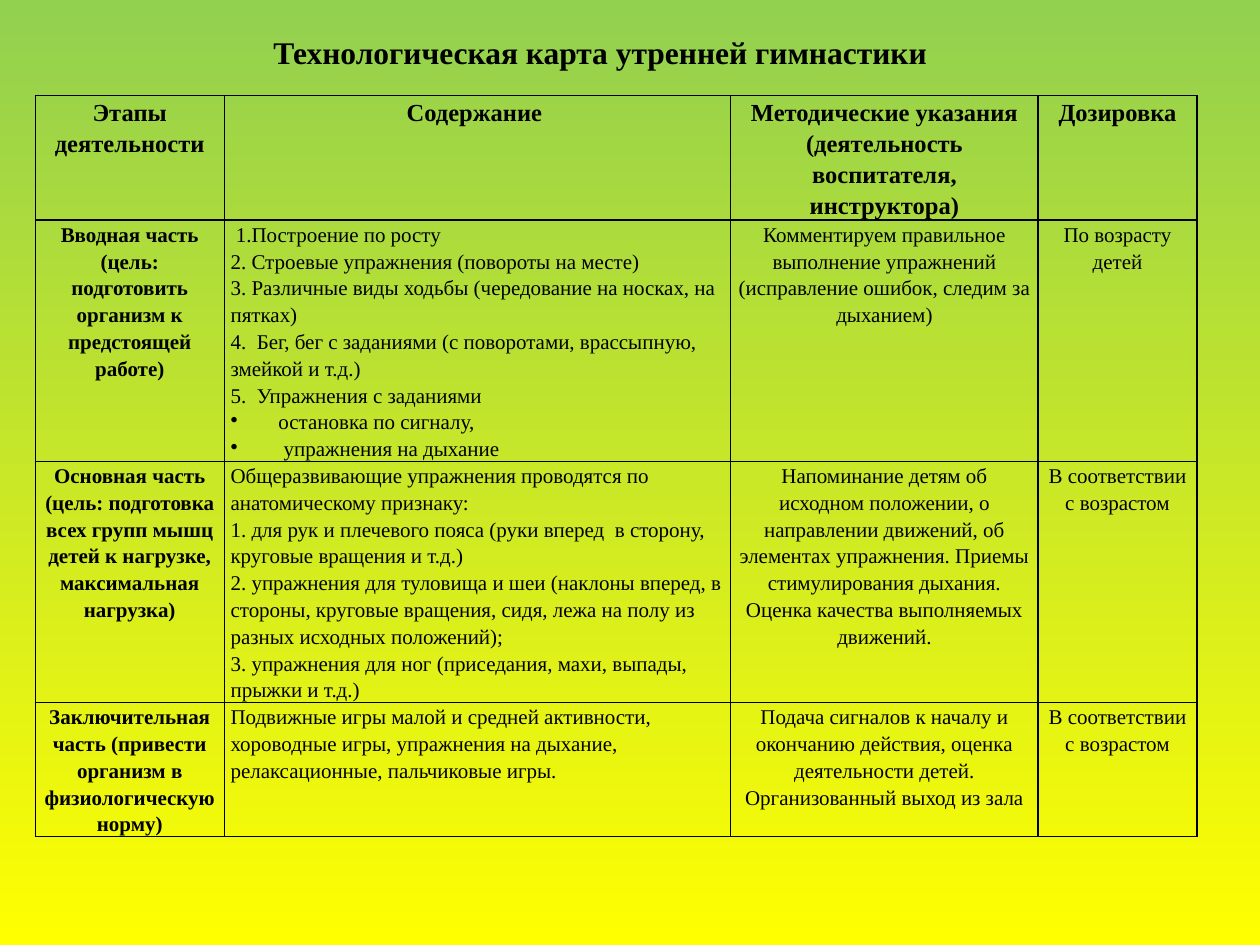
import pptx
import pptx.util
import pptx.oxml
import pptx.oxml.ns
from pptx.dml.color import RGBColor
from pptx.enum.text import MSO_AUTO_SIZE, PP_ALIGN
from pptx.util import Inches
from lxml import etree

BLACK = RGBColor(0x00, 0x00, 0x00)
GREEN = RGBColor(0x92, 0xD0, 0x50)
YELLOW = RGBColor(0xFF, 0xFF, 0x00)
BULLET = "•"

COLUMN_WIDTHS = [1.5, 4.02, 2.44, 1.26]
ROW_HEIGHTS = [0.85, 1.55, 1.7, 0.93]

# Each cell is a list of paragraphs; a leading bullet marks a list item
ROWS = [
    [
        ["Этапы деятельности"],
        ["Содержание "],
        ["Методические указания (деятельность воспитателя, инструктора)"],
        ["Дозировка"],
    ],
    [
        ["Вводная часть (цель: подготовить организм к предстоящей работе)"],
        [
            " 1.Построение по росту",
            "2. Строевые упражнения (повороты на месте)",
            "3. Различные виды ходьбы (чередование на носках, на пятках)",
            "4.  Бег, бег с заданиями (с поворотами, врассыпную, змейкой и т.д.)",
            "5.  Упражнения с заданиями",
            "•остановка по сигналу,",
            "• упражнения на дыхание",
        ],
        ["Комментируем правильное выполнение упражнений "
         "(исправление ошибок, следим за дыханием)"],
        ["По возрасту детей"],
    ],
    [
        [
            " Основная часть ",
            "(цель: подготовка всех групп мышц детей к нагрузке, "
            "максимальная нагрузка)",
        ],
        [
            "Общеразвивающие упражнения проводятся по анатомическому признаку:",
            "1. для рук и плечевого пояса (руки вперед  в сторону, "
            "круговые вращения и т.д.)",
            "2. упражнения для туловища и шеи (наклоны вперед, в стороны, "
            "круговые вращения, сидя, лежа на полу из разных исходных положений);",
            "3. упражнения для ног (приседания, махи, выпады, прыжки и т.д.)",
        ],
        ["Напоминание детям об исходном положении, о направлении движений, "
         "об элементах упражнения. Приемы стимулирования дыхания. "
         "Оценка качества выполняемых движений."],
        ["В соответствии с возрастом"],
    ],
    [
        ["Заключительная часть (привести организм в физиологическую норму)"],
        ["Подвижные игры малой и средней активности, хороводные игры, "
         "упражнения на дыхание, релаксационные, пальчиковые игры."],
        [
            "Подача сигналов к началу и окончанию действия, "
            "оценка деятельности детей.",
            "Организованный выход из зала",
        ],
        ["В соответствии с возрастом"],
    ],
]


class SlideBuilder:
    font_name = "Times New Roman"
    line_spacing = 1.15
    indent = Inches(0.38)

    def __init__(self, page):
        self.page = page

    def background(self, top, bottom):
        fill = self.page.background.fill
        fill.gradient()
        fill.gradient_angle = 270
        for stop, color in zip(fill.gradient_stops, (top, bottom)):
            stop.color.rgb = color

    def style(self, paragraph, size, bold, align):
        paragraph.alignment = align
        font = paragraph.font
        font.name = self.font_name
        font.size = pptx.util.Pt(size)
        font.bold = bold
        font.color.rgb = BLACK

    def title(self, text, left, top, width, height):
        box = self.page.shapes.add_textbox(
            Inches(left), Inches(top), Inches(width), Inches(height))
        frame = box.text_frame
        frame.word_wrap = True
        frame.auto_size = MSO_AUTO_SIZE.SHAPE_TO_FIT_TEXT
        frame.text = text
        self.style(frame.paragraphs[0], 18, True, PP_ALIGN.CENTER)

    def bullet(self, paragraph):
        properties = paragraph._p.get_or_add_pPr()
        properties.set("marL", str(self.indent))
        properties.set("indent", str(-self.indent))
        mark = etree.SubElement(properties, pptx.oxml.ns.qn("a:buChar"))
        mark.set("char", BULLET)

    def borders(self, cell):
        properties = cell._tc.get_or_add_tcPr()
        for position, side in enumerate(("lnL", "lnR", "lnT", "lnB")):
            properties.insert(position, pptx.oxml.parse_xml(
                f'<a:{side} {pptx.oxml.ns.nsdecls("a")} w="12700"><a:solidFill>'
                f'<a:srgbClr val="{BLACK}"/></a:solidFill></a:{side}>'))

    def cell(self, cell, lines, size, bold, align):
        cell.margin_left = cell.margin_right = Inches(0.05)
        cell.margin_top = cell.margin_bottom = 0
        cell.fill.background()
        self.borders(cell)
        frame = cell.text_frame
        for number, line in enumerate(lines):
            paragraph = frame.add_paragraph() if number else frame.paragraphs[0]
            paragraph.text = line.removeprefix(BULLET)
            paragraph.line_spacing = self.line_spacing
            if line.startswith(BULLET):
                self.bullet(paragraph)
            self.style(paragraph, size, bold, align)

    def table(self, rows, left, top, widths, heights):
        table = self.page.shapes.add_table(
            len(rows), len(widths), Inches(left), Inches(top),
            Inches(sum(widths)), Inches(sum(heights))).table
        table.first_row = table.horz_banding = False
        for column, width in zip(table.columns, widths):
            column.width = Inches(width)
        for row, height in zip(table.rows, heights):
            row.height = Inches(height)
        for r, row in enumerate(rows):
            for c, lines in enumerate(row):
                header = r == 0
                content = c == 1 and not header
                self.cell(table.cell(r, c), lines,
                          size=14 if header else 12,
                          bold=header or c == 0,
                          align=PP_ALIGN.LEFT if content else PP_ALIGN.CENTER)


def main():
    deck = pptx.Presentation()
    deck.slide_width, deck.slide_height = Inches(10), Inches(7.5)
    builder = SlideBuilder(deck.slides.add_slide(deck.slide_layouts[6]))

    # Background
    builder.background(GREEN, YELLOW)

    # Stages of the exercise session
    builder.table(ROWS, 0.28, 0.76, COLUMN_WIDTHS, ROW_HEIGHTS)

    # Heading
    builder.title("Технологическая карта утренней гимнастики",
                  0.83, 0.21, 7.87, 0.4)

    deck.save("out.pptx")


if __name__ == "__main__":
    main()
